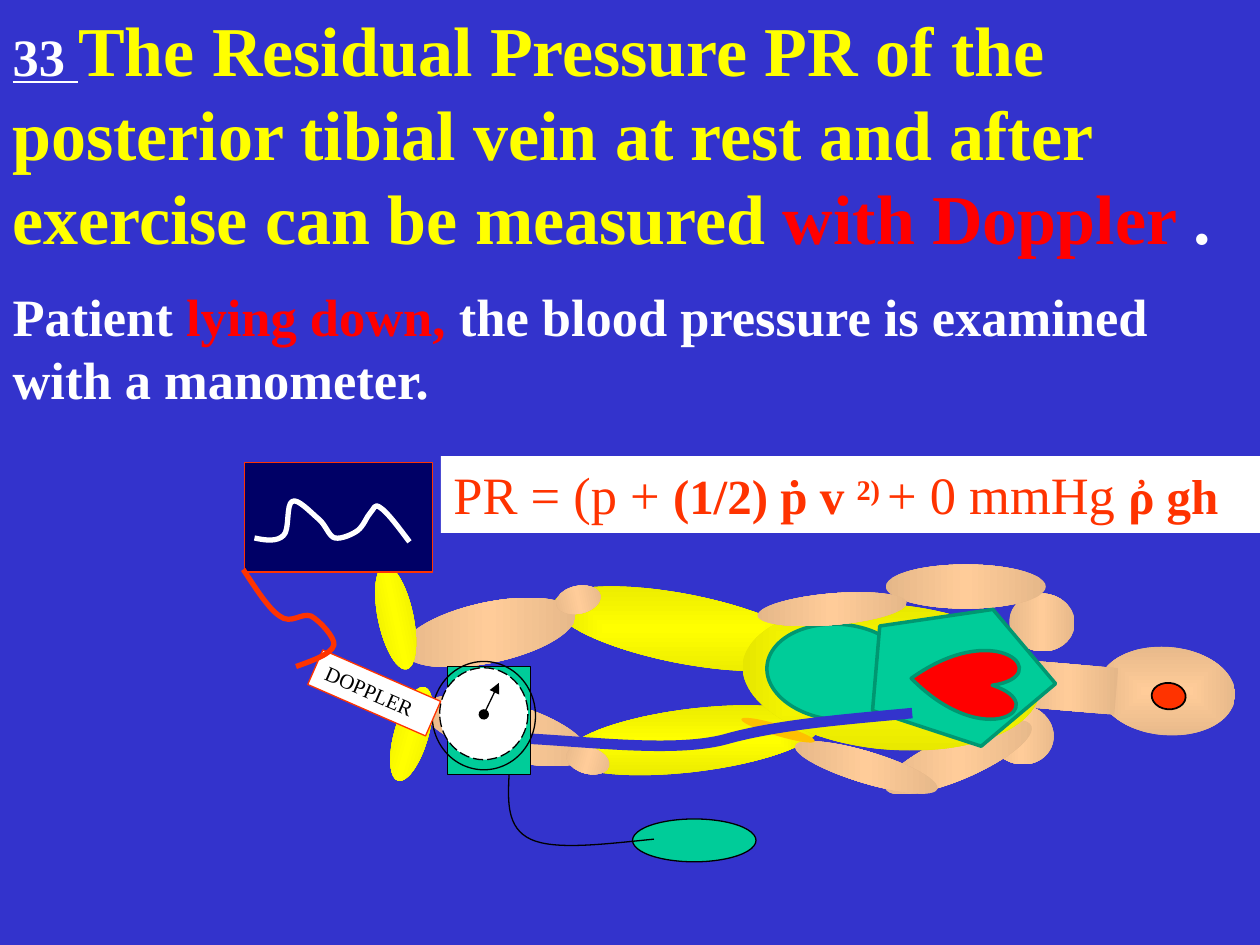
from lxml import etree
from pptx import Presentation, util as u
from pptx.dml.color import RGBColor
from pptx.enum import dml, shapes, text
from pptx.oxml import parse_xml
from pptx.oxml.ns import nsdecls, qn

INCH = 2.54  # centimetres; the layout below is on an inch grid
SHAPE = shapes.MSO_SHAPE
OVAL, RECT = SHAPE.OVAL, SHAPE.RECTANGLE
BLUE, GREEN, EDGE, RED, NAVY = "3333CC", "00CC99", "009771", "FF3300", "000066"
WHITE, BLACK, YELLOW, BRIGHT = "FFFFFF", "000000", "FFFF00", "FF0000"
SKIN, SKIN_DARK, YELLOW_DARK = "FFCC99", "E5B789", "E5E500"

LINEAR = '<a:lin ang="{}" scaled="1"/>'
CENTRE = '<a:path path="shape"><a:fillToRect l="50000" t="50000" r="50000" b="50000"/></a:path>'
GRADIENTS = {  # colours, direction, turns with the shape
    "limb": ((SKIN_DARK, SKIN, SKIN_DARK), LINEAR.format(0), 0),
    "knee": ((SKIN_DARK, SKIN, SKIN_DARK), LINEAR.format(5400000), 1),
    "foot": ((YELLOW_DARK, YELLOW, YELLOW_DARK), LINEAR.format(5400000), 1),
    "cloth": ((YELLOW, YELLOW_DARK), CENTRE, 1),
    "head": ((SKIN, SKIN_DARK), CENTRE, 1),
}


def paint(shape, fill=None, line=None, width=0.75):
    """Set fill (hex, gradient name or none) and line, without a shadow."""
    shape.shadow.inherit = False
    if fill in GRADIENTS:
        colours, direction, turns = GRADIENTS[fill]
        stops = "".join(
            f'<a:gs pos="{100000 * i // (len(colours) - 1)}"><a:srgbClr val="{colour}"/></a:gs>'
            for i, colour in enumerate(colours))
        geometry = shape._element.spPr.find(qn("a:prstGeom"))
        geometry.addnext(parse_xml(
            f'<a:gradFill {nsdecls("a")} rotWithShape="{turns}">'
            f'<a:gsLst>{stops}</a:gsLst>{direction}</a:gradFill>'))
    elif fill:
        shape.fill.solid()
        shape.fill.fore_color.rgb = RGBColor.from_string(fill)
    else:
        shape.fill.background()
    if line:
        shape.line.color.rgb = RGBColor.from_string(line)
        shape.line.width = u.Pt(width)
    else:
        shape.line.fill.background()
    return shape


def draw_curve(start, segments, line, width=0.75, fill=None):
    """Draw a chain of cubic curves, each given as x1, y1, x2, y2, x, y."""
    ends = [start] + [segment[4:] for segment in segments]
    left, top = (min(values) for values in zip(*ends))
    unit = 1000  # path units per inch
    builder = slide.shapes.build_freeform(
        *[round(unit * value) for value in start], scale=u.Cm(INCH) / unit)
    builder.add_line_segments(
        [(round(unit * x), round(unit * y)) for x, y in ends[1:]], close=False)
    shape = builder.convert_to_shape()
    # Bend each straight segment with its two control points
    for straight, segment in zip(list(shape._element.iter(qn("a:lnTo"))), segments):
        straight.tag = qn("a:cubicBezTo")
        for index, (x, y) in enumerate((segment[:2], segment[2:4])):
            point = etree.Element(qn("a:pt"), x=str(round(unit * (x - left))),
                                  y=str(round(unit * (y - top))))
            straight.insert(index, point)
    return paint(shape, fill, line, width)


presentation = Presentation()
presentation.slide_width, presentation.slide_height = u.Cm(10 * INCH), u.Cm(7.5 * INCH)
slide = presentation.slides.add_slide(presentation.slide_layouts[5])
slide.background.fill.solid()
slide.background.fill.fore_color.rgb = RGBColor.from_string("F2F2F2")

# Patient: preset, left, top, width, height, rotation, fill, line, line width
patient = [
    (OVAL, 5.15, 3.94, 0.55, 2.1, 101, "cloth"),
    (OVAL, 3.64, 4.32, 0.48, 1.4, 78, "limb"),
    (OVAL, 2.72, 4.76, 0.84, 0.28, 78, "foot"),
    (OVAL, 4.48, 4.58, 0.22, 0.36, 78, "knee"),
    (OVAL, 8.91, 4.94, 0.7, 1.09, 94.9, "head"),
    (RECT, 8.29, 5.07, 0.37, 0.77, 94.9, "limb"),
    (OVAL, 8.04, 4.68, 0.46, 0.52, 94.9, "limb"),
    (OVAL, 7.49, 4.02, 0.35, 1.27, 90, "limb"),
    (OVAL, 5.25, 4.86, 0.5, 2.03, 83, "cloth"),
    (OVAL, 3.79, 5.12, 0.44, 1.36, 106, "limb"),
    (OVAL, 2.88, 5.69, 0.77, 0.27, 106, "foot"),
    (OVAL, 4.56, 5.86, 0.21, 0.35, 106, "knee"),
    (OVAL, 7.87, 5.57, 0.47, 0.52, 106.8, "limb"),
    (OVAL, 7.43, 5.38, 0.35, 1.26, 66.8, "limb"),
    (OVAL, 6.75, 5.5, 0.25, 1.18, 106.8, "limb"),
    (OVAL, 6.13, 5.49, 0.09, 0.61, 106.8, "FFC000"),
    (OVAL, 9.17, 5.39, 0.21, 0.27, 94.9, RED, BLACK, 1),
    (OVAL, 6.5, 4.19, 1.15, 2.37, 94.9, "cloth"),
    (OVAL, 6.28, 4.76, 0.76, 1.15, 94.9, GREEN, EDGE, 2),
    (SHAPE.REGULAR_PENTAGON, 7.12, 4.65, 1.09, 1.43, 94.9, GREEN, EDGE, 2),
    (SHAPE.HEART, 7.39, 4.99, 0.54, 0.86, 94.9, BRIGHT, EDGE, 2),
    (OVAL, 6.48, 4.24, 0.25, 1.19, 265.1, "limb"),
]
# Manometer, pump bulb and Doppler screen
devices = [
    (RECT, 3.55, 5.29, 0.66, 0.86, 0, GREEN, BLACK),
    (OVAL, 3.49, 5.3, 0.7, 0.73, 0, WHITE, BLACK),
    (OVAL, 3.43, 5.25, 0.82, 0.86, 0, None, BLACK),
    (OVAL, 5.02, 6.5, 0.98, 0.34, 0, GREEN, BLACK),
    (RECT, 1.94, 3.67, 1.49, 0.87, 0, NAVY, RED),
]
for group in (patient, devices):
    for preset, left, top, width, height, rotation, *style in group:
        box = [u.Cm(INCH * value) for value in (left, top, width, height)]
        shape = slide.shapes.add_shape(preset, *box)
        shape.rotation = rotation
        paint(shape, *style)
        if group is devices and style[0] == WHITE:
            shape.line.dash_style = dml.MSO_LINE.LONG_DASH
    if group is patient:  # the vein lies over the body, under the manometer
        draw_curve((3.66, 5.89), [(4, 5.77, 5.17, 6.02, 5.75, 5.87),
                                  (6.17, 5.75, 6.71, 5.71, 7.24, 5.66)], BLUE, 6)

# Manometer needle
needle = slide.shapes.add_connector(
    shapes.MSO_CONNECTOR.STRAIGHT, *[u.Cm(INCH * value) for value in (3.84, 5.67, 3.96, 5.42)])
needle.line.color.rgb = RGBColor.from_string(BLACK)
needle.line.width = u.Pt(0.75)
for end, kind in (("a:headEnd", "oval"), ("a:tailEnd", "triangle")):
    etree.SubElement(needle.line._get_or_add_ln(), qn(end), type=kind)
etree.SubElement(needle._element.spPr, qn("a:effectLst"))

# Pump tube and Doppler trace
draw_curve((4.04, 6.15), [(4.03, 6.36, 4.02, 6.57, 4.21, 6.66),
                          (4.4, 6.75, 4.79, 6.7, 5.19, 6.66)], BLACK)
draw_curve((2.02, 4.27), [
    (2.11, 4.29, 2.2, 4.3, 2.25, 4.25), (2.3, 4.21, 2.27, 4, 2.32, 3.98),
    (2.36, 3.95, 2.47, 4.07, 2.53, 4.12), (2.59, 4.17, 2.61, 4.26, 2.66, 4.27),
    (2.71, 4.28, 2.8, 4.24, 2.84, 4.21), (2.89, 4.17, 2.91, 4.1, 2.94, 4.07),
    (2.97, 4.04, 2.97, 3.99, 3.02, 4.03), (3.07, 4.06, 3.16, 4.18, 3.25, 4.3)], WHITE, 3, NAVY)

# Texts: shape, box, rotation, fill, line, paragraphs of runs (text, size, colour, bold)
title = slide.shapes.title
formula, probe = (slide.shapes.add_textbox(0, 0, 0, 0) for _ in range(2))
texts = [
    (title, (0, 0, 10, 7.5), 0, BLUE, None, [
        [("33 ", 30, WHITE, True),
         ("The Residual Pressure PR of the posterior tibial vein at rest and after "
          "exercise can be measured ", 40, YELLOW, True),
         ("with Doppler ", 40, BRIGHT, True), (".", 40, WHITE, True)],
        [("Patient ", 30, WHITE, True), ("lying down, ", 30, BRIGHT, True),
         ("the blood pressure is examined with a manometer.", 30, WHITE, True)]]),
    (formula, (3.5, 3.62, 6.5, 0.61), 0, WHITE, None, [
        [("PR = (p + ", 30, RED, False), ("(1/2) ṗ v ", 28, RED, True), ("2) ", 28, RED, True),
         ("+ 0 mmHg ", 30, RED, False), ("ῤ gh", 28, RED, True)]]),
    (probe, (2.46, 5.35, 1.02, 0.3), 23.6, WHITE, RED, [[("DOPPLER", 12, BLACK, False)]]),
]
FRAME = {"word_wrap": True, "auto_size": text.MSO_AUTO_SIZE.NONE,
         "vertical_anchor": text.MSO_ANCHOR.TOP}
for shape, box, rotation, fill, line, paragraphs in texts:
    shape.left, shape.top, shape.width, shape.height = [u.Cm(INCH * value) for value in box]
    shape.rotation = rotation
    paint(shape, fill, line)
    frame = shape.text_frame
    for name, value in FRAME.items():
        setattr(frame, name, value)
    for index, runs in enumerate(paragraphs):
        paragraph = frame.add_paragraph() if index else frame.paragraphs[0]
        paragraph.alignment = text.PP_ALIGN.LEFT
        paragraph.space_before = u.Pt(15 * index)
        for content, size, colour, bold in runs:
            run = paragraph.add_run()
            run.text = content
            for name, value in {"name": "Times New Roman", "size": u.Pt(size), "bold": bold}.items():
                setattr(run.font, name, value)
            run.font.color.rgb = RGBColor.from_string(colour)

# Underlined number and superscript square
title.text_frame.paragraphs[0].runs[0].font.underline = True
formula.text_frame.paragraphs[0].runs[2].font._element.set("baseline", "30000")

# Cable from the screen to the probe
draw_curve((2.35, 5.29), [
    (2.49, 5.24, 2.63, 5.19, 2.65, 5.12), (2.66, 5.06, 2.54, 4.93, 2.47, 4.89),
    (2.39, 4.86, 2.31, 4.96, 2.22, 4.89), (2.13, 4.83, 2.03, 4.67, 1.93, 4.52)], RED, 3)

presentation.save("out.pptx")
